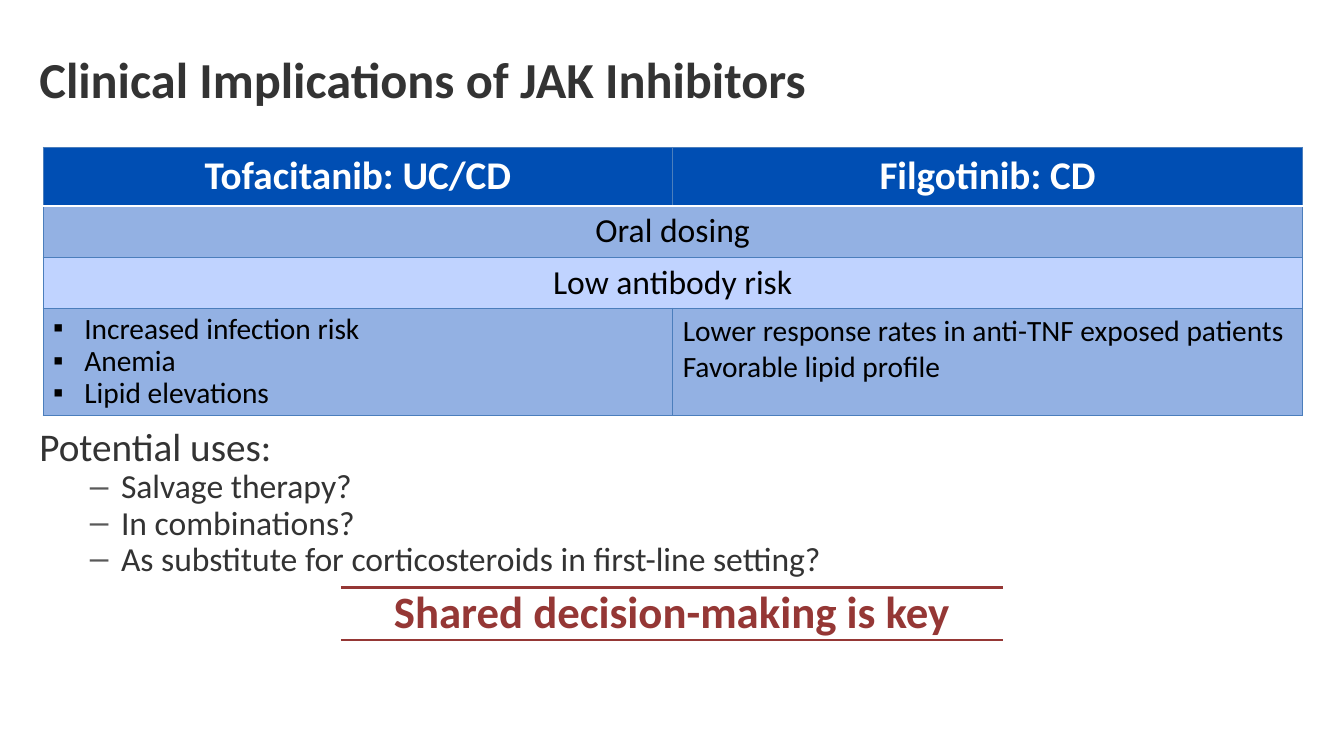
from lxml import etree
from pptx import Presentation
from pptx.dml.color import RGBColor
from pptx.enum.shapes import MSO_CONNECTOR
from pptx.enum.text import MSO_ANCHOR, MSO_AUTO_SIZE, PP_ALIGN
from pptx.oxml.ns import qn
from pptx.util import Inches, Pt

LEFT, CENTER = PP_ALIGN.LEFT, PP_ALIGN.CENTER
TOP, MIDDLE = MSO_ANCHOR.TOP, MSO_ANCHOR.MIDDLE
NO_FIT = MSO_AUTO_SIZE.NONE
STRAIGHT = MSO_CONNECTOR.STRAIGHT
W, H = Inches(13.333), Inches(7.5)
FONT = "Calibri"
COLORS = {
    "text": "333333", "dash": "595959", "head": "004EB3", "band": "93B1E3",
    "light": "C0D3FF", "border": "4B7EBC", "white": "FFFFFF",
    "black": "000000", "accent": "953735",
}


def rgb(name):
    return RGBColor.from_string(COLORS[name])


def share(x, y, w, h):
    return [int(v) for v in (W * x / 100, H * y / 100, W * w / 100, H * h / 100)]


def place(shape, box):
    shape.left, shape.top, shape.width, shape.height = box


def add_color(parent, tag, color):
    node = etree.SubElement(parent, qn(tag))
    etree.SubElement(node, qn("a:srgbClr"), val=COLORS[color])


def write(tf, text, size, color, bold=False, align=LEFT, spacing=None,
          level=0, bullet=None, bullet_color=None, margin=0, first=True):
    p = tf.paragraphs[0] if first else tf.add_paragraph()
    pPr = p._p.get_or_add_pPr()
    hang = Inches(0.31) if bullet else 0
    pPr.set("marL", str(Inches(margin)))
    pPr.set("indent", str(-hang))
    if bullet:
        add_color(pPr, "a:buClr", bullet_color or color)
        etree.SubElement(pPr, qn("a:buFont"), typeface="Arial")
        etree.SubElement(pPr, qn("a:buChar"), char=bullet)
    else:
        etree.SubElement(pPr, qn("a:buNone"))
    p.level, p.alignment = level, align
    p.space_before = p.space_after = Pt(0)
    if spacing:
        p.line_spacing = spacing
    r = p.add_run()
    r.text = text
    r.font.name, r.font.size, r.font.bold = FONT, Pt(size), bold
    r.font.color.rgb = rgb(color)


def title(s, box):
    sp = s.shapes.title
    place(sp, box)
    tf = sp.text_frame
    tf.auto_size, tf.vertical_anchor = NO_FIT, MIDDLE
    write(tf, "Clinical Implications of JAK Inhibitors", 36, "text",
          bold=True, spacing=0.9)


def potential_uses(s, box):
    sp = s.placeholders[1]
    place(sp, box)
    tf = sp.text_frame
    tf.auto_size, tf.vertical_anchor = NO_FIT, TOP
    write(tf, "Potential uses:", 28, "text", spacing=0.9)
    for use in ("Salvage therapy?", "In combinations?",
                "As substitute for corticosteroids in first-line setting?"):
        write(tf, use, 24, "text", spacing=0.9, level=1, bullet="–",
              bullet_color="dash", margin=0.81, first=False)


def style_cell(cell, fill, row):
    tcPr = cell._tc.get_or_add_tcPr()
    header_edge = {0: "a:lnB", 1: "a:lnT"}.get(row)
    for tag in ("a:lnL", "a:lnR", "a:lnT", "a:lnB"):
        color, width = ("white", 2) if tag == header_edge else ("border", 0.75)
        ln = etree.SubElement(tcPr, qn(tag), w=str(Pt(width)))
        add_color(ln, "a:solidFill", color)
    cell.fill.solid()
    cell.fill.fore_color.rgb = rgb(fill)


def drug_table(s, box):
    head = dict(size=28, color="white", bold=True, align=CENTER)
    shared = dict(size=24, color="black", align=CENTER)
    risks = dict(size=21, color="black", spacing=0.9, bullet="▪", margin=0.31)
    plain = dict(size=21, color="black")
    rows = [
        (0.22, "head", [(["Tofacitanib: UC/CD"], head), (["Filgotinib: CD"], head)]),
        (0.19, "band", [(["Oral dosing"], shared)]),
        (0.19, "light", [(["Low antibody risk"], shared)]),
        (0.4, "band", [
            (["Increased infection risk", "Anemia", "Lipid elevations"], risks),
            (["Lower response rates in anti-TNF exposed patients",
              "Favorable lipid profile"], plain)]),
    ]
    table = s.shapes.add_table(len(rows), 2, *box).table
    for i, (height, fill, cells) in enumerate(rows):
        table.rows[i].height = int(box[3] * height)
        for j in range(2):
            style_cell(table.cell(i, j), fill, i)
        if len(cells) == 1:
            table.cell(i, 0).merge(table.cell(i, 1))
        for j, (lines, fmt) in enumerate(cells):
            for k, line in enumerate(lines):
                write(table.cell(i, j).text_frame, line, first=k == 0, **fmt)


def key_message(s, box):
    x, y, w, h = box
    sp = s.shapes.add_textbox(int(x + w * 0.04), int(y - h * 0.17),
                              int(w * 0.92), int(h * 1.23))
    sp.text_frame.word_wrap = True
    write(sp.text_frame, "Shared decision-making is key", 32, "accent",
          bold=True, align=CENTER)
    for edge in (y + h, y):
        line = s.shapes.add_connector(STRAIGHT, x, edge, x + w, edge)
        line.line.color.rgb = rgb("accent")
        line.line.width = Pt(2)
        etree.SubElement(line._element.spPr, qn("a:effectLst"))


def main():
    prs = Presentation()
    prs.slide_width, prs.slide_height = W, H
    s = prs.slides.add_slide(prs.slide_layouts[1])
    title(s, share(2.18, 2.53, 95.87, 16.67))
    potential_uses(s, share(2.18, 55.87, 95.87, 25.47))
    drug_table(s, share(3.2, 19.47, 93.7, 35.4))
    key_message(s, share(25.36, 77.73, 49.29, 6.93))
    prs.save("out.pptx")


if __name__ == "__main__":
    main()
